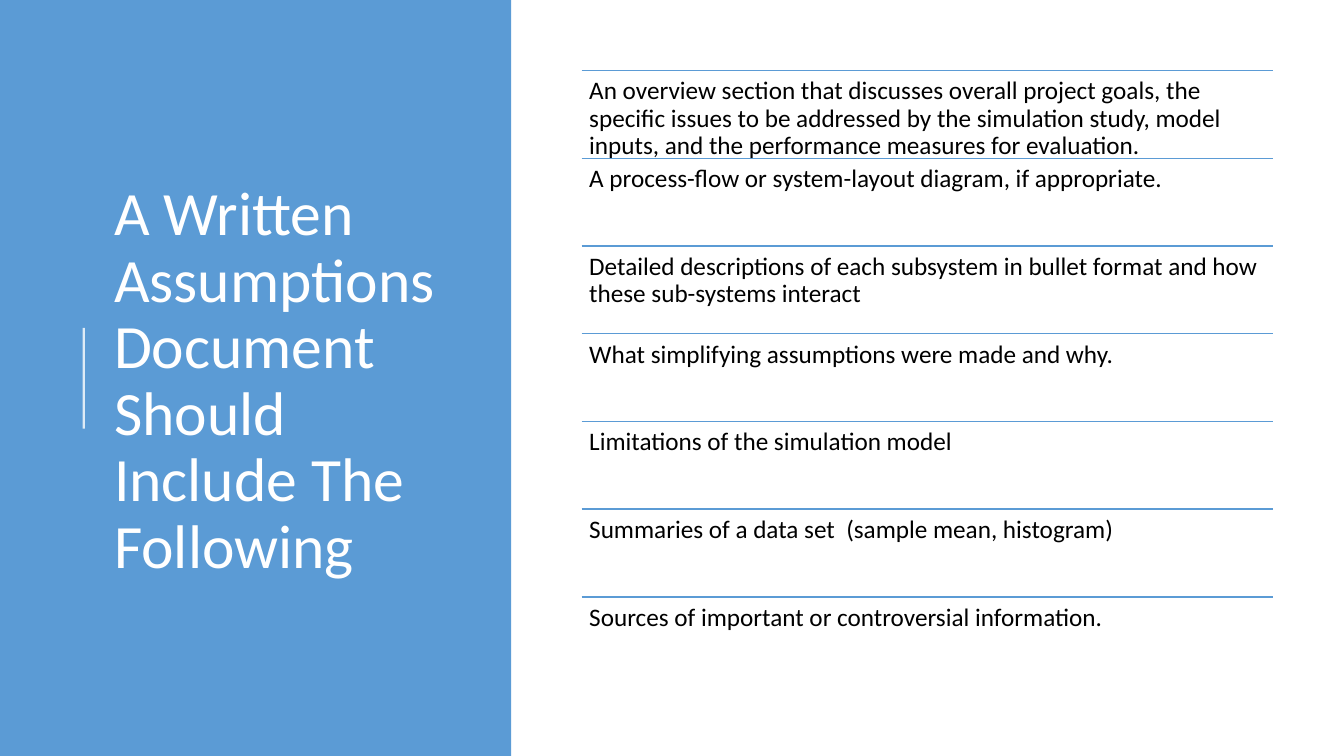
"""Build the slide on what a written assumptions document should include."""
from lxml import etree
from pptx import Presentation
from pptx.dml.color import RGBColor
from pptx.enum.shapes import MSO_CONNECTOR as Connector, MSO_SHAPE as Shape
from pptx.enum.text import MSO_ANCHOR as Anchor, MSO_AUTO_SIZE as AutoSize, PP_ALIGN as Align
from pptx.oxml.ns import qn
from pptx.util import Cm, Pt

COLORS = {"blue": "5B9BD5", "white": "FFFFFF", "black": "000000"}
ITEMS = [
    "An overview section that discusses overall project goals, the specific issues to be "
    "addressed by the simulation study, model inputs, and the performance measures for evaluation.",
    "A process-flow or system-layout diagram, if appropriate.",
    "Detailed descriptions of each subsystem in bullet format and how these sub-systems interact",
    "What simplifying assumptions were made and why.",
    "Limitations of the simulation model",
    "Summaries of a data set  (sample mean, histogram)",
    "Sources of important or controversial information.",
]
LIST_LEFT, LIST_TOP, LIST_WIDTH, ROW_HEIGHT = Cm(14.66), Cm(1.78), Cm(17.42), Cm(2.21)


def write_text(box, text, size, color, frame_format):
    frame = box.text_frame
    for name, value in frame_format.items():
        setattr(frame, name, value)
    para = frame.paragraphs[0]
    para.alignment = Align.LEFT
    para.line_spacing = 0.9
    span = para.add_run()
    span.text = text
    for name, value in {"name": "Calibri", "size": Pt(size)}.items():
        setattr(span.font, name, value)
    span.font.color.rgb = RGBColor.from_string(COLORS[color])


def draw_line(page, start, end, color, width):
    line = page.shapes.add_connector(Connector.STRAIGHT, *start, *end)
    line.line.color.rgb = RGBColor.from_string(COLORS[color])
    line.line.width = Pt(width)
    etree.SubElement(line._element.spPr, qn("a:effectLst"))
    return line


deck = Presentation()
deck.slide_width, deck.slide_height = Cm(33.87), Cm(19.05)
page = deck.slides.add_slide(deck.slide_layouts[5])
title = page.shapes.title

panel = page.shapes.add_shape(Shape.RECTANGLE, 0, 0, Cm(12.88), deck.slide_height)
panel.shadow.inherit = False
panel.fill.solid()
panel.fill.fore_color.rgb = RGBColor.from_string(COLORS["blue"])
panel.line.fill.background()
title._element.addprevious(panel._element)

accent = draw_line(page, (Cm(2.11), Cm(10.8)), (Cm(2.11), Cm(8.26)), "white", 1.5)
accent_color = accent._element.spPr.find(".//" + qn("a:srgbClr"))
etree.SubElement(accent_color, qn("a:alpha"), val="80000")

title.left, title.top, title.width, title.height = Cm(2.62), Cm(1.98), Cm(9.37), Cm(15.29)
title_format = {"word_wrap": True, "auto_size": AutoSize.NONE, "vertical_anchor": Anchor.MIDDLE}
write_text(title, "A Written Assumptions Document Should Include The Following",
           44, "white", title_format)

inset = Cm(0.19)
item_format = {"word_wrap": True, "vertical_anchor": Anchor.TOP, "margin_left": inset,
               "margin_top": inset, "margin_right": inset, "margin_bottom": inset}
for row, item in enumerate(ITEMS):
    top = LIST_TOP + row * ROW_HEIGHT
    draw_line(page, (LIST_LEFT, top), (LIST_LEFT + LIST_WIDTH, top), "blue", 1)
    box = page.shapes.add_textbox(LIST_LEFT, top, LIST_WIDTH, ROW_HEIGHT)
    write_text(box, item, 18, "black", item_format)

deck.save("out.pptx")
